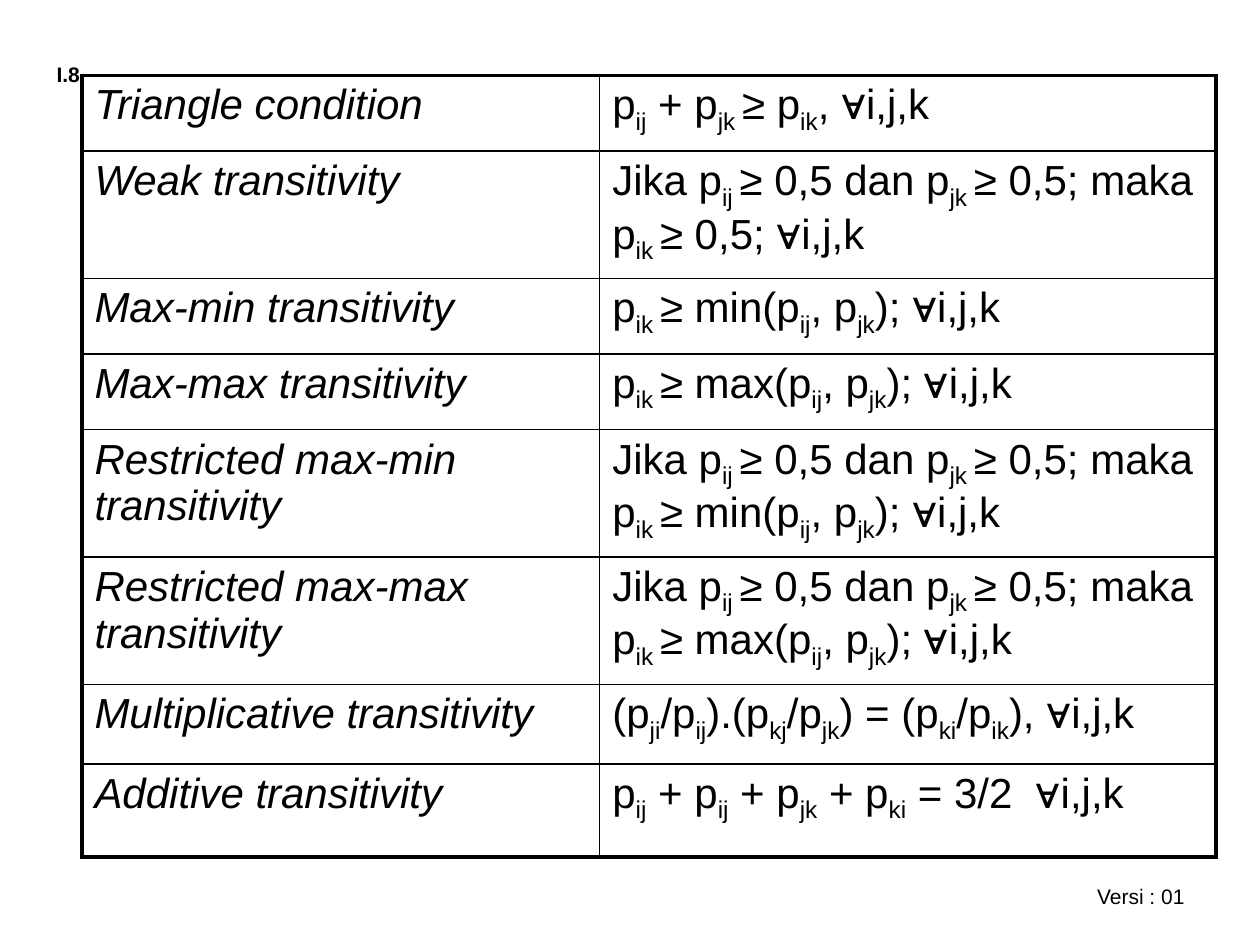
import pptx
import pptx.dml.color
import pptx.enum.text
import pptx.oxml.ns
import pptx.util
from lxml import etree

BLACK = "000000"
SUBSCRIPT = "_"
PREMISE = "Jika p_ij _≥ 0,5 dan p_jk _≥ 0,5; maka "
MINIMUM = "p_ik _≥ min(p_ij_, p_jk_); ∀i,j,k"
MAXIMUM = "p_ik _≥ max(p_ij_, p_jk_); ∀i,j,k"
CONDITIONS = [
    ("Triangle condition", "p_ij_ + p_jk _≥ p_ik_, ∀i,j,k", 0.6),
    ("Weak transitivity", PREMISE + "p_ik _≥ 0,5; ∀i,j,k", 1.01),
    ("Max-min transitivity", MINIMUM, 0.6),
    ("Max-max transitivity", MAXIMUM, 0.6),
    ("Restricted max-min transitivity", PREMISE + MINIMUM, 1.01),
    ("Restricted max-max transitivity", PREMISE + MAXIMUM, 1.01),
    ("Multiplicative transitivity",
     "(p_ji_/p_ij_).(p_kj_/p_jk_) = (p_ki_/p_ik_), ∀i,j,k", 0.63),
    ("Additive transitivity", "p_ij_ + p_ij_ + p_jk_ + p_ki_ = 3/2  ∀i,j,k", 0.74),
]
COLUMN_WIDTHS = (4.11, 4.89)
TABLE_LEFT, TABLE_TOP = 0.65, 0.6
OUTER_LINE, INNER_LINE = 2.25, 1
LABELS = [
    ("Versi : 01", (7.17, 6.96, 2.33, 0.3), {"align": "RIGHT"}),
    ("I.8", (0.35, 0.44, 1.81, 0.3), {"bold": True}),
]


def color(value):
    return pptx.dml.color.RGBColor.from_string(value)


def write(frame, text, size=12, bold=False, italic=False, align="LEFT"):
    frame.word_wrap = True
    paragraph = frame.paragraphs[0]
    paragraph.alignment = getattr(pptx.enum.text.PP_ALIGN, align)
    for position, part in enumerate(text.split(SUBSCRIPT)):
        if not part:
            continue
        run = paragraph.add_run()
        run.text = part
        run.font.name = "Arial"
        run.font.size = pptx.util.Pt(size)
        run.font.bold = bold
        run.font.italic = italic
        run.font.color.rgb = color(BLACK)
        if position % 2:
            run.font._element.set("baseline", "-25000")


def add_border(cell, side, width):
    properties = cell._tc.get_or_add_tcPr()
    line = etree.SubElement(properties, pptx.oxml.ns.qn(f"a:ln{side}"),
                            w=str(pptx.util.Pt(width)))
    fill = etree.SubElement(line, pptx.oxml.ns.qn("a:solidFill"))
    etree.SubElement(fill, pptx.oxml.ns.qn("a:srgbClr"), val=BLACK)


def add_conditions(slide):
    row_count, column_count = len(CONDITIONS), len(COLUMN_WIDTHS)
    heights = [height for _, _, height in CONDITIONS]
    bounds = map(pptx.util.Inches,
                 (TABLE_LEFT, TABLE_TOP, sum(COLUMN_WIDTHS), sum(heights)))
    table = slide.shapes.add_table(row_count, column_count, *bounds).table
    table.first_row = table.horz_banding = False
    for column, width in zip(table.columns, COLUMN_WIDTHS):
        column.width = pptx.util.Inches(width)
    for row, (name, formula, height) in enumerate(CONDITIONS):
        table.rows[row].height = pptx.util.Inches(height)
        for column, text in enumerate((name, formula)):
            cell = table.cell(row, column)
            write(cell.text_frame, text, size=24, italic=column == 0)
            outer_sides = {"L": column == 0, "R": column == column_count - 1,
                           "T": row == 0, "B": row == row_count - 1}
            for side, outer in outer_sides.items():
                add_border(cell, side, OUTER_LINE if outer else INNER_LINE)
            cell.fill.background()


def main():
    presentation = pptx.Presentation()
    presentation.slide_width = pptx.util.Inches(10)
    presentation.slide_height = pptx.util.Inches(7.5)
    slide = presentation.slides.add_slide(presentation.slide_layouts[6])
    for text, bounds, style in LABELS:
        label = slide.shapes.add_textbox(*map(pptx.util.Inches, bounds))
        write(label.text_frame, text, **style)
    add_conditions(slide)
    presentation.save("out.pptx")


if __name__ == "__main__":
    main()
